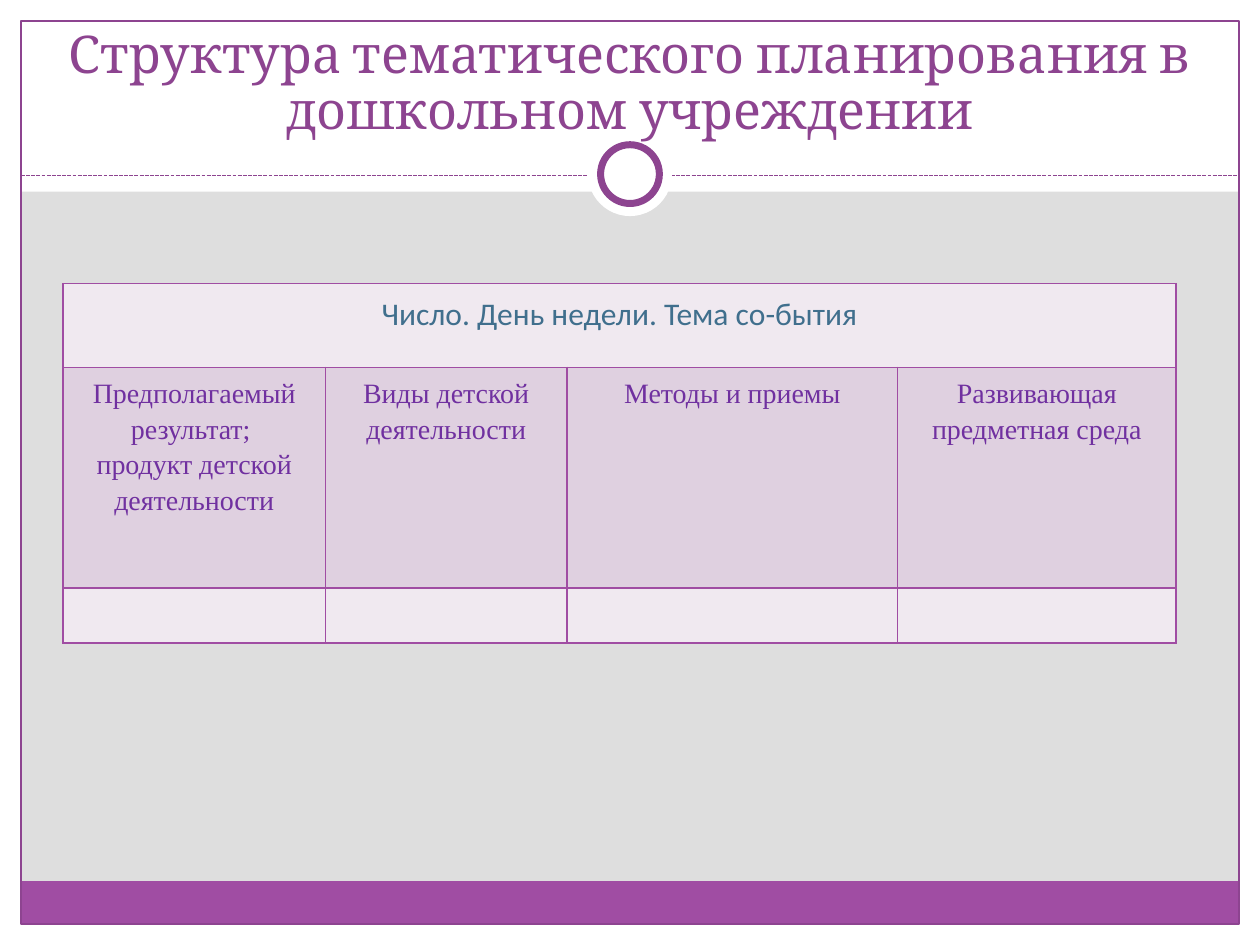
from lxml import etree
from pptx import Presentation
from pptx import util as u
from pptx.dml.color import RGBColor
from pptx.enum import dml, shapes, text
from pptx.oxml.ns import qn

Pt = u.Pt

# Content
TITLE = "Структура тематического планирования в дошкольном учреждении"
HEAD = "Число. День недели. Тема со-бытия"
LABELS = [
    ["Предполагаемый результат; ", "продукт детской деятельности"],
    ["Виды детской деятельности"],
    ["Методы и приемы"],
    ["Развивающая предметная среда"],
]

# Look
HUES = {"back": "DEDEDE", "white": "FFFFFF", "band": "A04DA3", "plum": "8D4490",
        "pale": "F0E9F0", "lilac": "DFD0E0", "blue": "406F8D", "violet": "7030A0"}
FONTS = {
    "title": {"name": "Cambria", "size": Pt(29.7), "hue": "plum"},
    "head": {"name": "Calibri", "size": Pt(18), "hue": "blue"},
    "label": {"name": "Times New Roman", "size": Pt(16), "hue": "violet"},
}
WIDE, HIGH, EDGE = 720, 540, 12
COLS = [150, 138, 189, 159]
ROWS = [48, 126, 31.5]
FILLS = ["pale", "lilac", "pale"]

# kind, (left, top, width, height), fill, line width
RECT, OVAL = shapes.MSO_SHAPE.RECTANGLE, shapes.MSO_SHAPE.OVAL
FRAME = [
    (RECT, (0, HIGH - EDGE, WIDE, EDGE), "white", 0),
    (RECT, (0, 0, WIDE, 109.5), "white", 0),
    (RECT, (0, 0, EDGE, HIGH), "white", 0),
    (RECT, (WIDE - EDGE, 0, EDGE, HIGH), "white", 0),
    (RECT, (EDGE, 503.5, WIDE - 2 * EDGE, 24.5), "band", 0),
    (RECT, (EDGE, EDGE, WIDE - 2 * EDGE, HIGH - 2 * EDGE), None, 0.75),
]
RING = [
    (OVAL, (336, 75.5, 48, 48), "white", 0),
    (OVAL, (343.2, 82.7, 33.6, 33.6), "white", 4),
]


def rgb(hue):
    return RGBColor.from_string(HUES[hue])


def paint(fill, hue):
    fill.solid()
    fill.fore_color.rgb = rgb(hue)


def draw(parts):
    for kind, box, hue, width in parts:
        shape = slide.shapes.add_shape(kind, *map(Pt, box))
        shape.shadow.inherit = False
        if hue:
            paint(shape.fill, hue)
        else:
            shape.fill.background()
        if width:
            shape.line.color.rgb = rgb("plum")
            shape.line.width = Pt(width)
        else:
            shape.line.fill.background()


def write(frame, lines, look, gap):
    for i, line in enumerate(lines):
        para = frame.paragraphs[0] if i == 0 else frame.add_paragraph()
        para.alignment = text.PP_ALIGN.CENTER
        para.line_spacing = gap
        run = para.add_run()
        run.text = line
        for key, val in FONTS[look].items():
            if key == "hue":
                run.font.color.rgb = rgb(val)
            else:
                setattr(run.font, key, val)


def edge(cell, hue, width):
    props = cell._tc.get_or_add_tcPr()
    for i, side in enumerate(("lnL", "lnR", "lnT", "lnB")):
        line = etree.Element(qn("a:" + side), w=str(Pt(width)))
        fill = etree.SubElement(line, qn("a:solidFill"))
        etree.SubElement(fill, qn("a:srgbClr"), val=HUES[hue])
        props.insert(i, line)


deck = Presentation()
deck.slide_width, deck.slide_height = Pt(WIDE), Pt(HIGH)
slide = deck.slides.add_slide(deck.slide_layouts[6])
paint(slide.background.fill, "back")

# Frame, dashed rule and ring
draw(FRAME)
rule = slide.shapes.add_connector(shapes.MSO_CONNECTOR.STRAIGHT,
                                  Pt(EDGE), Pt(100.5), Pt(WIDE - EDGE), Pt(100.5))
rule.line.color.rgb = rgb("plum")
rule.line.width = Pt(0.75)
rule.line.dash_style = dml.MSO_LINE.SQUARE_DOT
etree.SubElement(rule._element.spPr, qn("a:effectLst"))
draw(RING)

# Title
frame = slide.shapes.add_textbox(Pt(24), Pt(24), Pt(672), Pt(60)).text_frame
frame.word_wrap = True
frame.vertical_anchor = text.MSO_ANCHOR.BOTTOM
write(frame, [TITLE], "title", 0.9)

# Plan table
table = slide.shapes.add_table(len(ROWS), len(COLS), Pt(36), Pt(162),
                               Pt(sum(COLS)), Pt(sum(ROWS))).table
for col, width in zip(table.columns, COLS):
    col.width = Pt(width)
for row, height, hue in zip(table.rows, ROWS, FILLS):
    row.height = Pt(height)
    for cell in row.cells:
        paint(cell.fill, hue)
        edge(cell, "band", 1)
table.cell(0, 0).merge(table.cell(0, len(COLS) - 1))
write(table.cell(0, 0).text_frame, [HEAD], "head", 1.15)
for i, lines in enumerate(LABELS):
    write(table.cell(1, i).text_frame, lines, "label", 1.15)

deck.save("out.pptx")
